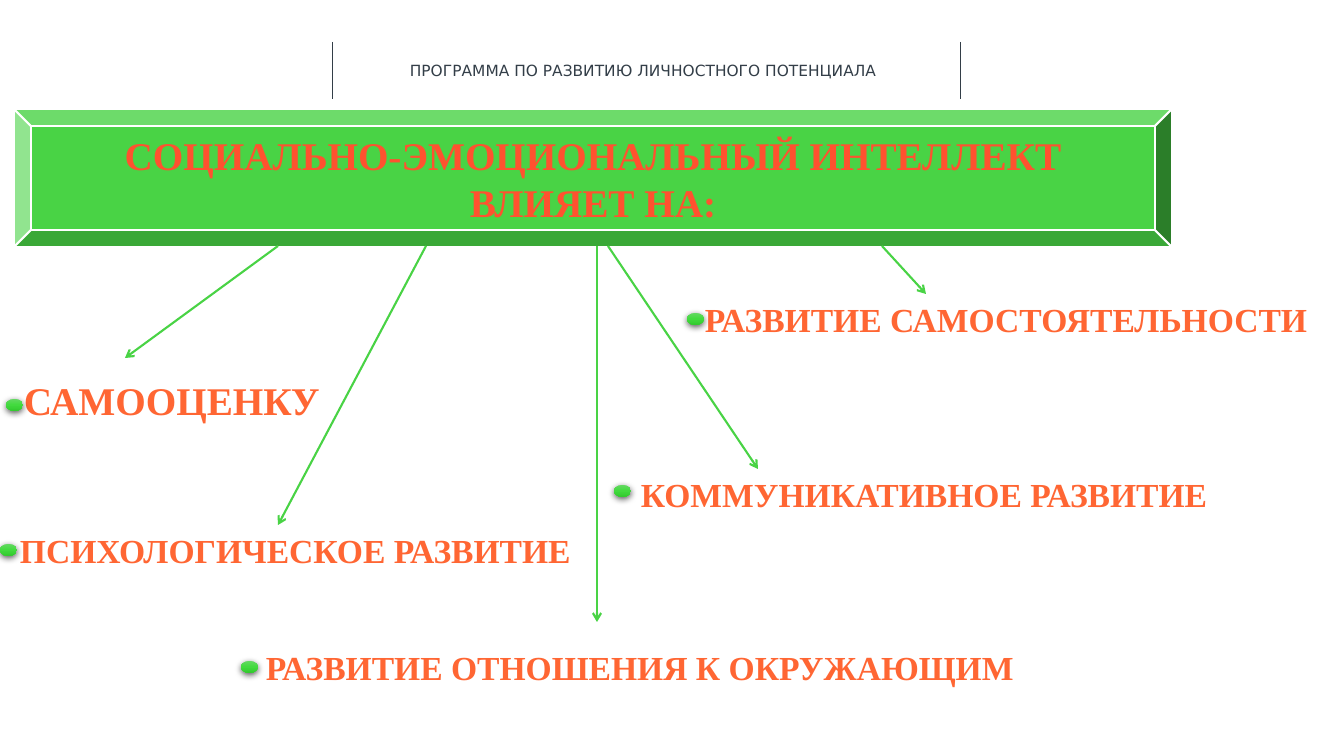
from lxml.etree import SubElement
from pptx import Presentation
from pptx.dml.color import RGBColor
from pptx.enum.shapes import MSO_CONNECTOR as Connector, MSO_SHAPE as Preset
from pptx.enum.text import MSO_ANCHOR as Anchor, MSO_AUTO_SIZE as AutoSize, PP_ALIGN as Align
from pptx.oxml.ns import qn
from pptx.util import Emu, Pt

COLORS = {
    "ink": "333E48", "green": "49D345", "white": "FFFFFF",
    "heading": "FF522F", "orange": "FF6633", "shadow": "000000",
    "bead_top": "64D962", "bead_middle": "42DA3E", "bead_bottom": "33CA2F",
}
SERIF, SANS = "Times New Roman", "DejaVu Sans"
BEAD_STOPS = ((0, "bead_top"), (50, "bead_middle"), (100, "bead_bottom"))


def px(length):
    return Emu(round(length * 914400 / 100.8))


def color(name):
    return RGBColor.from_string(COLORS[name])


def add_color(parent, name):
    return SubElement(parent, qn("a:srgbClr"), val=COLORS[name])


class Board:
    """Draws styled elements on one slide, with lengths in px."""

    def __init__(self, slide):
        self.slide = slide
        self.shapes = slide.shapes

    def set_text(self, frame, text, size, font, ink, bold=True):
        frame.word_wrap = True
        frame.auto_size = AutoSize.NONE
        frame.text = text
        paragraph = frame.paragraphs[0]
        paragraph.font.name = font
        paragraph.font.size = Pt(size)
        paragraph.font.bold = bold
        paragraph.font.color.rgb = color(ink)
        return paragraph

    def label(self, text, left, top, width, height, size, font=SERIF, ink="orange", bold=True):
        box = self.shapes.add_textbox(px(left), px(top), px(width), px(height))
        self.set_text(box.text_frame, text, size, font, ink, bold)

    def banner(self, text, left, top, width, height, rim):
        plate = self.shapes.add_shape(Preset.BEVEL, px(left), px(top), px(width), px(height))
        plate.shadow.inherit = False
        plate.fill.solid()
        plate.fill.fore_color.rgb = color("green")
        plate.line.color.rgb = color("white")
        plate.line.width = Pt(1.5)
        heading = self.shapes.title
        heading.left, heading.top = px(left + rim), px(top + rim)
        heading.width, heading.height = px(width - 2 * rim), px(height - 2 * rim)
        self.set_text(heading.text_frame, text, 28, SERIF, "heading").alignment = Align.CENTER
        heading.text_frame.vertical_anchor = Anchor.MIDDLE
        plate._element.addnext(heading._element)

    def line(self, start, end, ink, width, arrow=False):
        stroke = self.shapes.add_connector(Connector.STRAIGHT, *map(px, start + end))
        stroke.line.color.rgb = color(ink)
        stroke.line.width = Pt(width)
        properties = stroke._element.spPr
        if arrow:
            SubElement(properties.find(qn("a:ln")), qn("a:tailEnd"), type="arrow")
        SubElement(properties, qn("a:effectLst"))

    def bead(self, left, top):
        bead = self.shapes.add_shape(Preset.FLOWCHART_CONNECTOR, px(left), px(top), px(17), px(12))
        bead.line.fill.background()
        bead.fill.gradient()
        bead.fill.gradient_angle = 270
        properties = bead._element.spPr
        stops = properties.find(".//" + qn("a:gsLst"))
        stops.clear()
        for position, name in BEAD_STOPS:
            add_color(SubElement(stops, qn("a:gs"), pos=str(position * 1000)), name)
        bead.shadow.inherit = False
        shadow = SubElement(properties.find(qn("a:effectLst")), qn("a:outerShdw"),
                            blurRad=str(Pt(4.5)), dist=str(Pt(1.5)), dir="5400000", rotWithShape="0")
        SubElement(add_color(shadow, "shadow"), qn("a:alpha"), val="63000")


INFLUENCES = (
    ("ПСИХОЛОГИЧЕСКОЕ РАЗВИТИЕ", (10, 525, 587, 50), 24, (0, 544), (426, 246), (278, 525)),
    ("КОММУНИКАТИВНОЕ РАЗВИТИЕ", (631, 469, 701, 82), 24, (614, 485), (608, 246), (758, 469)),
    ("САМООЦЕНКУ", (14, 371, 334, 57), 28, (6, 399), (278, 246), (125, 358)),
    ("РАЗВИТИЕ САМОСТОЯТЕЛЬНОСТИ", (695, 294, 637, 50), 24, (687, 313), (882, 246), (926, 294)),
    ("РАЗВИТИЕ ОТНОШЕНИЯ К ОКРУЖАЮЩИМ", (256, 642, 771, 50), 24, (241, 661), (597, 246), (597, 622)),
)


def main():
    deck = Presentation()
    deck.slide_width, deck.slide_height = px(1344), px(756)
    board = Board(deck.slides.add_slide(deck.slide_layouts[5]))
    for x in (332, 960):
        board.line((x, 42), (x, 99), "ink", 0.5)
    board.label("ПРОГРАММА ПО РАЗВИТИЮ ЛИЧНОСТНОГО ПОТЕНЦИАЛА",
                400, 56, 491, 29, 11, SANS, "ink", False)
    board.banner("СОЦИАЛЬНО-ЭМОЦИОНАЛЬНЫЙ ИНТЕЛЛЕКТ ВЛИЯЕТ НА:", 14, 109, 1158, 138, 17)
    for text, box, size, bead, start, end in INFLUENCES:
        board.label(text, *box, size)
        board.line(start, end, "green", 1.5, arrow=True)
        board.bead(*bead)
    deck.save("out.pptx")


if __name__ == "__main__":
    main()
